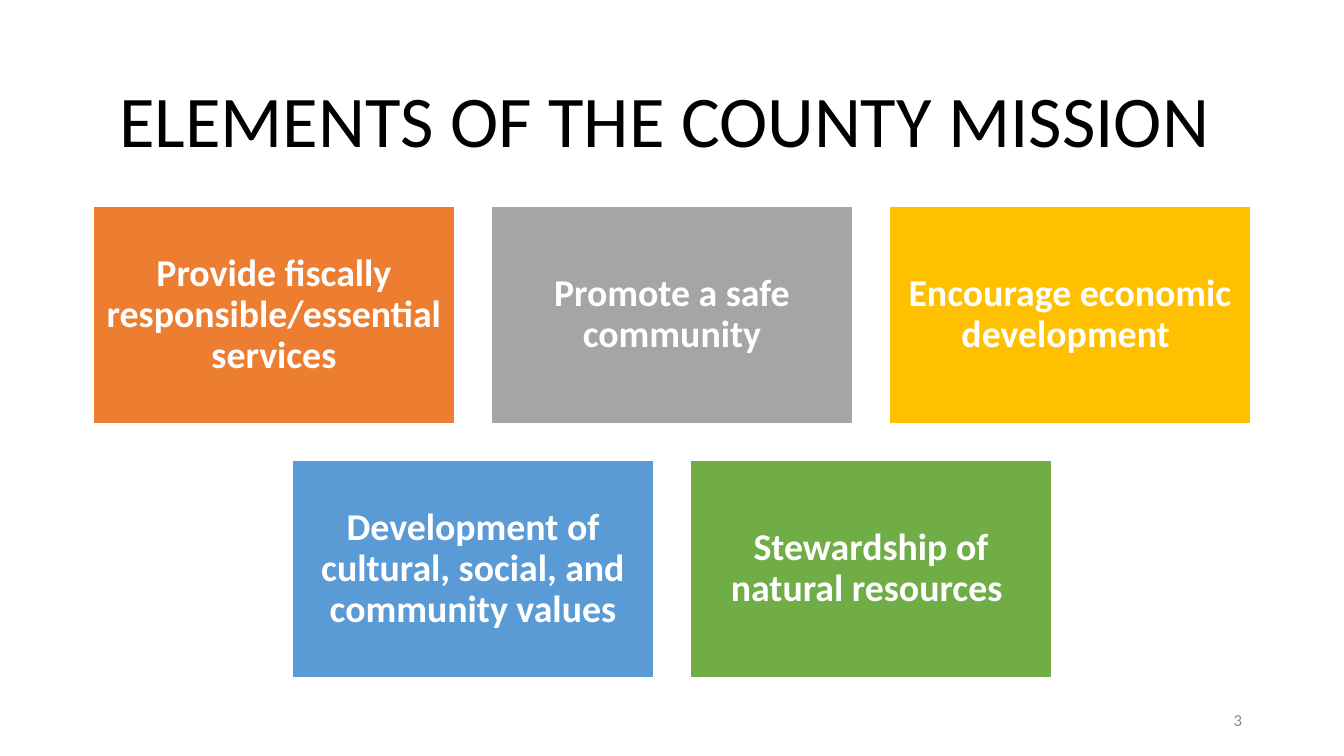
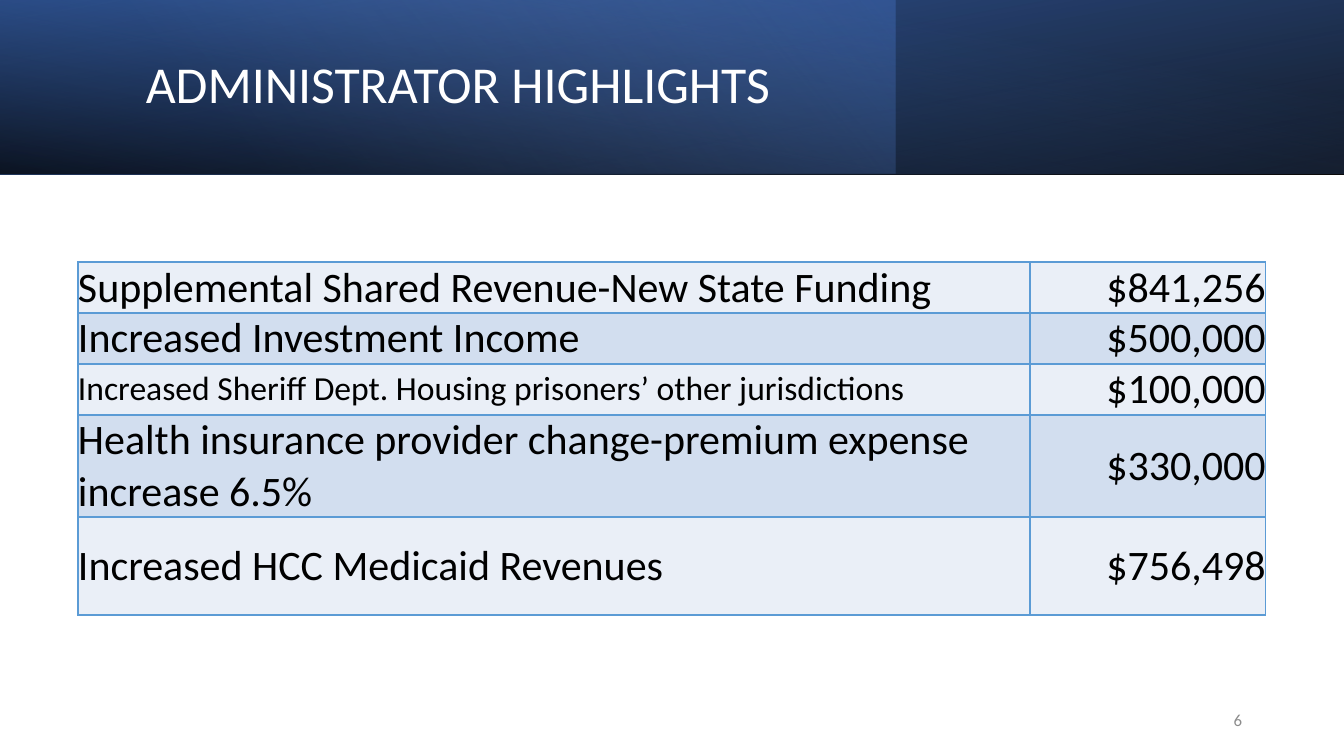
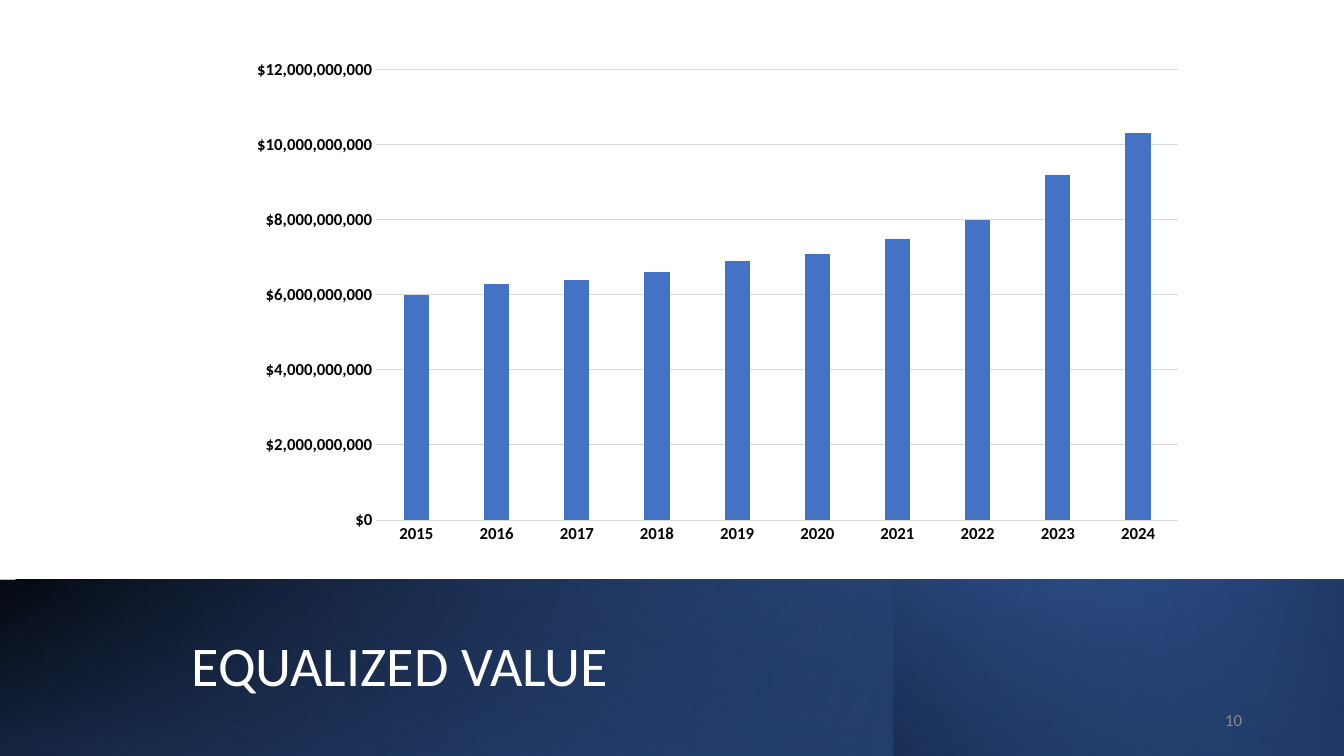
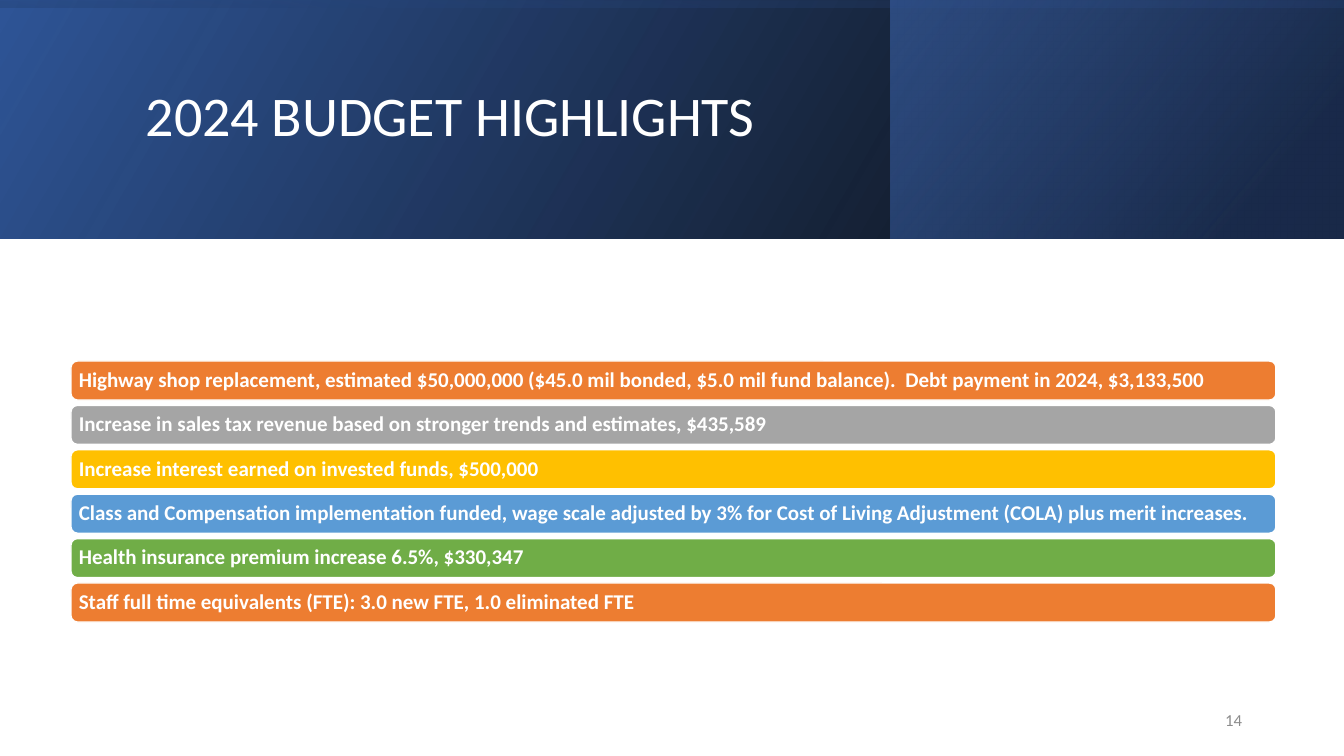
from pptx import Presentation
from pptx.chart.data import CategoryChartData
from pptx.dml.color import RGBColor
from pptx.enum.chart import XL_CHART_TYPE, XL_TICK_MARK
from pptx.enum.shapes import MSO_SHAPE
from pptx.enum.text import MSO_ANCHOR, PP_ALIGN
from pptx.oxml import parse_xml
from pptx.oxml.ns import nsdecls
from pptx.util import Emu, Pt

RECT, ROUNDED = MSO_SHAPE.RECTANGLE, MSO_SHAPE.ROUNDED_RECTANGLE
LEFT, CENTER, RIGHT = PP_ALIGN.LEFT, PP_ALIGN.CENTER, PP_ALIGN.RIGHT
MIDDLE = MSO_ANCHOR.MIDDLE
NO_TICK = XL_TICK_MARK.NONE
COLUMNS = XL_CHART_TYPE.COLUMN_CLUSTERED

SLIDE_W, SLIDE_H = 1344, 756
EMU_PER_PX = 914400 / 100.8
FONT = "Calibri"
BLACK, WHITE, GREY, GRID = "000000", "FFFFFF", "8C8C8C", "D9D9D9"
BLUE, NAVY, DEEP_BLUE, PALE_BLUE = "4472C4", "203864", "2F5597", "8FAADC"
SKY = "5B9BD5"
ACCENTS = ["ED7D31", "A5A5A5", "FFC000", SKY, "70AD47"]
ROW_FILLS = ["EAEFF7", "D2DEEF"]

MISSION_ROWS = [
    ["Provide fiscally responsible/essential services",
     "Promote a safe community",
     "Encourage economic development "],
    ["Development of cultural, social, and community values",
     "Stewardship of natural resources "],
]

# item, amount, item text size, row height
HIGHLIGHTS = [
    ("Supplemental Shared Revenue-New State Funding", "$841,256", 30, 51),
    ("Increased Investment Income", "$500,000", 30, 51),
    ("Increased Sheriff Dept. Housing prisoners’ other jurisdictions", "$100,000", 24, 51),
    ("Health insurance provider change-premium expense increase 6.5%", "$330,000", 30, 102),
    ("Increased HCC Medicaid Revenues", "$756,498", 30, 98),
]

EQUALIZED_BILLIONS = {
    "2015": 6.0, "2016": 6.3, "2017": 6.4, "2018": 6.6, "2019": 6.9,
    "2020": 7.1, "2021": 7.5, "2022": 8.0, "2023": 9.2, "2024": 10.3,
}

BUDGET_POINTS = [
    "Highway shop replacement, estimated $50,000,000 ($45.0 mil bonded, "
    "$5.0 mil fund balance).  Debt payment in 2024, $3,133,500",
    "Increase in sales tax revenue based on stronger trends and estimates, $435,589",
    "Increase interest earned on invested funds, $500,000",
    "Class and Compensation implementation funded, wage scale adjusted by 3% "
    "for Cost of Living Adjustment (COLA) plus merit increases.",
    "Health insurance premium increase 6.5%, $330,347",
    "Staff full time equivalents (FTE): 3.0 new FTE, 1.0 eliminated FTE",
]

# Band layers: box, rotation, flipped, gradient angle, stops (position, colour, alpha %)
HIGHLIGHTS_BAND = [
    ((0, 0, SLIDE_W, 174), 180, True, 100, [(0, BLACK, 96), (100, DEEP_BLUE, 100)]),
    ((0, 0, 896, 174), 0, False, 140, [(0, BLUE, 41), (74, PALE_BLUE, 0)]),
    ((0, 0, SLIDE_W, 174), 0, True, 260, [(0, BLACK, 63), (78, BLUE, 15)]),
]
VALUE_BAND = [
    ((0, 580, SLIDE_W, 176), 0, True, 140, [(0, BLACK, 100), (100, BLUE, 100)]),
    ((0, 580, SLIDE_W, 176), 0, True, 170, [(0, BLUE, 0), (100, NAVY, 100)]),
    ((894, 580, 450, 176), 0, True, 220, [(0, NAVY, 100), (100, BLUE, 0)]),
    ((-1, 580, SLIDE_W, 176), 180, False, 280, [(0, BLACK, 0), (99, NAVY, 55)]),
]
BUDGET_BAND = [
    ((0, 0, SLIDE_W, 239), 0, True, 330, [(0, BLACK, 96), (100, DEEP_BLUE, 100)]),
    ((891, 0, 452, 239), 0, True, 320, [(19, NAVY, 68), (100, BLUE, 48)]),
    ((552, -552, 239, SLIDE_W), 270, True, 350, [(23, DEEP_BLUE, 16), (99, BLACK, 45)]),
]


def px(length):
    return Emu(round(length * EMU_PER_PX))


def place(box):
    return [px(length) for length in box]


def rgb(colour):
    return RGBColor.from_string(colour)


def style_font(font, size, colour, bold=False):
    font.name, font.size, font.bold = FONT, Pt(size), bold
    font.color.rgb = rgb(colour)


def write(frame, text, size, colour, align=LEFT, bold=False, spacing=0.9):
    paragraph = frame.paragraphs[0]
    paragraph.alignment, paragraph.line_spacing = align, spacing
    run = paragraph.add_run()
    run.text = text
    style_font(run.font, size, colour, bold)


def set_insets(target, inset):
    target.margin_left = target.margin_right = px(inset)
    target.margin_top = target.margin_bottom = px(inset)


def add_text(slide, box, text, size, colour, align):
    frame = slide.shapes.add_textbox(*place(box)).text_frame
    frame.word_wrap, frame.vertical_anchor = True, MIDDLE
    write(frame, text, size, colour, align)


def add_card(slide, kind, box, fill, text, size, align, inset):
    card = slide.shapes.add_shape(kind, *place(box))
    card.shadow.inherit = False
    card.fill.solid()
    card.fill.fore_color.rgb = rgb(fill)
    card.line.color.rgb = rgb(WHITE)
    card.line.width = Pt(1)
    frame = card.text_frame
    frame.word_wrap, frame.vertical_anchor = True, MIDDLE
    set_insets(frame, inset)
    write(frame, text, size, WHITE, align, bold=True)


def add_band_layer(slide, box, rotation, flipped, angle, stops):
    layer = slide.shapes.add_shape(RECT, *place(box))
    layer.shadow.inherit = False
    layer.line.fill.background()
    layer.fill.background()
    layer.rotation = rotation
    properties = layer._element.spPr
    if flipped:
        properties.xfrm.set("flipH", "1")
    stop_xml = "".join(
        f'<a:gs pos="{position * 1000}"><a:srgbClr val="{colour}">'
        f'<a:alpha val="{alpha * 1000}"/></a:srgbClr></a:gs>'
        for position, colour, alpha in stops)
    gradient = parse_xml(
        f'<a:gradFill {nsdecls("a")} rotWithShape="1"><a:gsLst>{stop_xml}</a:gsLst>'
        f'<a:lin ang="{angle * 60000}" scaled="0"/></a:gradFill>')
    properties.replace(properties.find("{*}noFill"), gradient)


def add_slide(deck, number, title, title_box, size, colour, align, band=()):
    """Add a slide with its band, title and page number."""
    slide = deck.slides.add_slide(deck.slide_layouts[6])
    for layer in band:
        add_band_layer(slide, *layer)
    add_text(slide, title_box, title, size, colour, align)
    add_text(slide, (950, 701, 302, 40), str(number), 12, GREY, RIGHT)
    return slide


def add_mission_tiles(slide):
    width, height, gap, top = 362, 218, 36, 206
    for row, texts in enumerate(MISSION_ROWS):
        row_width = len(texts) * (width + gap) - gap
        left = (SLIDE_W - row_width) / 2
        first = sum(len(earlier) for earlier in MISSION_ROWS[:row])
        for column, text in enumerate(texts):
            box = (left + column * (width + gap), top + row * (height + gap), width, height)
            add_card(slide, RECT, box, ACCENTS[first + column], text, 27, CENTER, 11)


def add_borders(cell, colour):
    properties = cell._tc.get_or_add_tcPr()
    for index, side in enumerate("LRTB"):
        properties.insert(index, parse_xml(
            f'<a:ln{side} {nsdecls("a")} w="12700"><a:solidFill>'
            f'<a:srgbClr val="{colour}"/></a:solidFill></a:ln{side}>'))


def add_highlights_table(slide):
    widths = [952, 236]
    heights = [height for *_, height in HIGHLIGHTS]
    table = slide.shapes.add_table(
        len(heights), len(widths), *place((78, 262, sum(widths), sum(heights)))).table
    table.first_row = table.horz_banding = False
    for column, width in zip(table.columns, widths):
        column.width = px(width)
    for index, (item, amount, item_size, height) in enumerate(HIGHLIGHTS):
        table.rows[index].height = px(height)
        entries = [(item, item_size, LEFT), (amount, 30, RIGHT)]
        for column, (text, size, align) in enumerate(entries):
            cell = table.cell(index, column)
            cell.fill.solid()
            cell.fill.fore_color.rgb = rgb(ROW_FILLS[index % 2])
            cell.vertical_anchor = MIDDLE
            set_insets(cell, 0)
            write(cell.text_frame, text, size, BLACK, align, spacing=1.0)
            add_borders(cell, SKY)


def add_value_chart(slide):
    data = CategoryChartData()
    data.categories = list(EQUALIZED_BILLIONS)
    data.add_series("Series 1", [round(value * 10**9) for value in EQUALIZED_BILLIONS.values()])
    chart = slide.shapes.add_chart(COLUMNS, *place((214, 44, 1015, 512)), data).chart
    chart.has_legend = chart.has_title = False
    style_font(chart.font, 10, BLACK)

    plot = chart.plots[0]
    plot.gap_width, plot.vary_by_categories = 219, False
    bars = plot.series[0].format.fill
    bars.solid()
    bars.fore_color.rgb = rgb(BLUE)

    years, dollars = chart.category_axis, chart.value_axis
    for axis in (years, dollars):
        axis.major_tick_mark = axis.minor_tick_mark = NO_TICK
        style_font(axis.tick_labels.font, 12, BLACK, bold=True)
    dollars.minimum_scale, dollars.maximum_scale = 0, 12 * 10**9
    dollars.major_unit = 2 * 10**9
    dollars.tick_labels.number_format = '"$"#,##0'
    dollars.tick_labels.number_format_is_linked = False
    dollars.format.line.fill.background()
    for line in (years.format.line, dollars.major_gridlines.format.line):
        line.color.rgb = rgb(GRID)
        line.width = Pt(0.75)

    area = chart._chartSpace.chart.plotArea
    for old_layout in area.findall("{*}layout"):
        area.remove(old_layout)
    spots = {"x": 0.16, "y": 0.05, "w": 0.79, "h": 0.88}
    modes = '<c:xMode val="edge"/><c:yMode val="edge"/>'
    sizes = "".join(f'<c:{key} val="{value}"/>' for key, value in spots.items())
    area.insert(0, parse_xml(
        f'<c:layout {nsdecls("c")}><c:manualLayout><c:layoutTarget val="inner"/>'
        f'{modes}{sizes}</c:manualLayout></c:layout>'))


def add_budget_bars(slide):
    first_top, last_top = 361, 583
    pitch = (last_top - first_top) / (len(BUDGET_POINTS) - 1)
    for index, text in enumerate(BUDGET_POINTS):
        box = (71, first_top + index * pitch, 1205, 39)
        add_card(slide, ROUNDED, box, ACCENTS[index % len(ACCENTS)], text, 15, LEFT, 6)


def main():
    deck = Presentation()
    deck.slide_width, deck.slide_height = px(SLIDE_W), px(SLIDE_H)

    add_mission_tiles(add_slide(
        deck, 3, "ELEMENTS OF THE COUNTY MISSION ", (93, 61, 1159, 125), 52, BLACK, CENTER))
    add_highlights_table(add_slide(
        deck, 6, "ADMINISTRATOR HIGHLIGHTS", (28, 23, 860, 128), 37, WHITE, CENTER,
        HIGHLIGHTS_BAND))
    add_value_chart(add_slide(
        deck, 10, "EQUALIZED VALUE", (182, 611, 491, 114), 40, WHITE, LEFT, VALUE_BAND))
    add_budget_bars(add_slide(
        deck, 14, "2024 BUDGET HIGHLIGHTS", (136, 32, 1072, 173), 40, WHITE, LEFT,
        BUDGET_BAND))

    deck.save("out.pptx")


if __name__ == "__main__":
    main()
